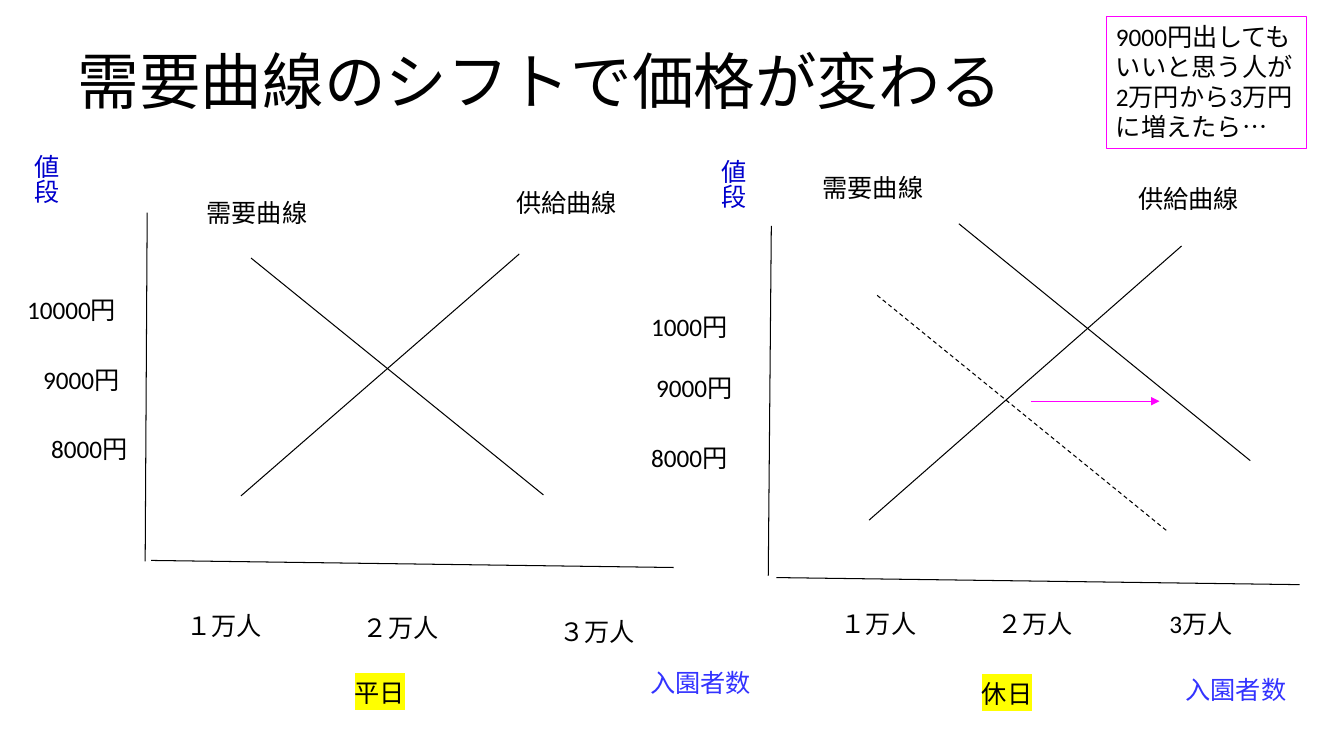
from dataclasses import dataclass

from lxml import etree
from pptx import Presentation
from pptx.dml.color import RGBColor
from pptx.enum.dml import MSO_LINE
from pptx.enum.shapes import MSO_CONNECTOR, MSO_SHAPE
from pptx.enum.text import MSO_ANCHOR, MSO_AUTO_SIZE, PP_ALIGN
from pptx.oxml.ns import qn
from pptx.util import Inches, Pt

STRAIGHT = MSO_CONNECTOR.STRAIGHT
RECTANGLE = MSO_SHAPE.RECTANGLE
DASH = MSO_LINE.DASH
LEFT = PP_ALIGN.LEFT
TOP, MIDDLE = MSO_ANCHOR.TOP, MSO_ANCHOR.MIDDLE
NO_AUTO_SIZE = MSO_AUTO_SIZE.NONE
TITLE_ONLY_LAYOUT = 5
LABEL_HEIGHT = 0.4


@dataclass(frozen=True)
class Theme:
    font: str = "Calibri"
    title_size: float = 44
    label_size: float = 18
    line_width: float = 0.75
    arrow_width: float = 0.5
    ink: str = "000000"
    price_axis: str = "0000CC"
    visitor_axis: str = "3333FF"
    shift: str = "FF00FF"
    highlight: str = "FFFF00"


THEME = Theme()

# Labels are (text, left, top, width); lines are (start, end).
WEEKDAY = {
    "labels": [
        ("10000円", 0.17, 2.87, 1.18),
        ("9000円", 0.33, 3.57, 1.18),
        ("8000円", 0.41, 4.25, 1.26),
        ("１万人", 1.75, 6.01, 1.02),
        ("２万人", 3.5, 6.03, 1.18),
        ("３万人", 5.45, 6.07, 1.02),
        ("需要曲線", 1.95, 1.91, 1.6),
        ("供給曲線", 5.02, 1.81, 1.56),
    ],
    "lines": [
        ((1.46, 2.11), (1.44, 5.57)),
        ((1.5, 5.56), (6.68, 5.63)),
        ((2.39, 4.92), (5.15, 2.52)),
        ((2.49, 2.56), (5.39, 4.91)),
    ],
    "price_axis": ("値段", 0.16, 1.43, 0.5, 0.79),
    "visitor_axis": ("入園者数", 6.35, 6.57, 1.35),
    "day": ("平日", 3.42, 6.67, 1.12),
}
HOLIDAY = {
    "labels": [
        ("1000円", 6.36, 3.04, 1.18),
        ("9000円", 6.41, 3.64, 1.18),
        ("8000円", 6.36, 4.34, 1.09),
        ("１万人", 8.24, 5.99, 1.02),
        ("２万人", 9.79, 5.99, 1.18),
        ("3万人", 11.5, 5.99, 1.02),
        ("需要曲線", 8.06, 1.66, 1.6),
        ("供給曲線", 11.19, 1.77, 1.56),
    ],
    "lines": [
        ((7.65, 2.24), (7.62, 5.71)),
        ((7.7, 5.73), (12.89, 5.8)),
        ((8.62, 5.16), (11.72, 2.44)),
        ((9.51, 2.22), (12.4, 4.57)),
    ],
    "price_axis": ("値段", 6.97, 1.48, 0.5, 0.72),
    "visitor_axis": ("入園者数", 11.66, 6.64, 1.5),
    "day": ("休日", 9.64, 6.68, 1.18),
}
OLD_DEMAND = ((8.7, 2.93), (11.59, 5.28))
DEMAND_SHIFT = ((10.23, 3.98), (11.5, 3.98))


def write_text(shape, text, size, color):
    text_frame = shape.text_frame
    text_frame.text = text
    text_frame.word_wrap = True
    paragraph = text_frame.paragraphs[0]
    paragraph.alignment = LEFT
    font = paragraph.runs[0].font
    font.name = THEME.font
    font.size = Pt(size)
    font.color.rgb = RGBColor.from_string(color)


def add_title(slide, text):
    title = slide.shapes.title
    title.left, title.top = Inches(0.67), Inches(0.21)
    title.width, title.height = Inches(12), Inches(1.25)
    write_text(title, text, THEME.title_size, THEME.ink)
    title.text_frame.auto_size = NO_AUTO_SIZE
    title.text_frame.vertical_anchor = MIDDLE
    title.text_frame.paragraphs[0].line_spacing = 0.9


def add_label(slide, text, left, top, width, height=LABEL_HEIGHT, color=THEME.ink):
    label = slide.shapes.add_textbox(
        Inches(left), Inches(top), Inches(width), Inches(height))
    write_text(label, text, THEME.label_size, color)
    return label


def set_vertical(label):
    label.text_frame._txBody.find(qn("a:bodyPr")).set("vert", "eaVert")


def highlight_text(label):
    """Mark the label's run; the schema wants the highlight right after the fill."""
    run = label.text_frame.paragraphs[0].runs[0]
    highlight = etree.Element(qn("a:highlight"))
    etree.SubElement(highlight, qn("a:srgbClr"), val=THEME.highlight)
    run._r.find(qn("a:rPr")).find(qn("a:solidFill")).addnext(highlight)


def add_line(slide, start, end, color=THEME.ink, width=THEME.line_width):
    line = slide.shapes.add_connector(
        STRAIGHT, *(Inches(value) for value in (*start, *end)))
    line.line.color.rgb = RGBColor.from_string(color)
    line.line.width = Pt(width)
    etree.SubElement(line._element.spPr, qn("a:effectLst"))
    return line


def add_arrow(slide, start, end):
    arrow = add_line(slide, start, end, THEME.shift, THEME.arrow_width)
    outline = arrow._element.spPr.find(qn("a:ln"))
    etree.SubElement(outline, qn("a:tailEnd"), type="triangle")


def add_callout(slide, text):
    callout = slide.shapes.add_shape(
        RECTANGLE, Inches(10.97), Inches(0.16), Inches(1.99), Inches(1.31))
    callout.shadow.inherit = False
    callout.fill.background()
    callout.line.color.rgb = RGBColor.from_string(THEME.shift)
    callout.line.width = Pt(THEME.line_width)
    write_text(callout, text, THEME.label_size, THEME.ink)
    callout.text_frame.vertical_anchor = TOP


def add_market(slide, market):
    """Draw one day's axes, curves and labels."""
    for start, end in market["lines"]:
        add_line(slide, start, end)
    for label in market["labels"]:
        add_label(slide, *label)
    set_vertical(add_label(slide, *market["price_axis"], color=THEME.price_axis))
    add_label(slide, *market["visitor_axis"], color=THEME.visitor_axis)
    highlight_text(add_label(slide, *market["day"]))


def main():
    presentation = Presentation()
    presentation.slide_width = Inches(13.33)
    presentation.slide_height = Inches(7.5)
    slide = presentation.slides.add_slide(
        presentation.slide_layouts[TITLE_ONLY_LAYOUT])
    add_title(slide, "需要曲線のシフトで価格が変わる")
    for market in (WEEKDAY, HOLIDAY):
        add_market(slide, market)
    add_line(slide, *OLD_DEMAND).line.dash_style = DASH
    add_arrow(slide, *DEMAND_SHIFT)
    add_callout(slide, "9000円出してもいいと思う人が2万円から3万円に増えたら…")
    presentation.save("out.pptx")


if __name__ == "__main__":
    main()
